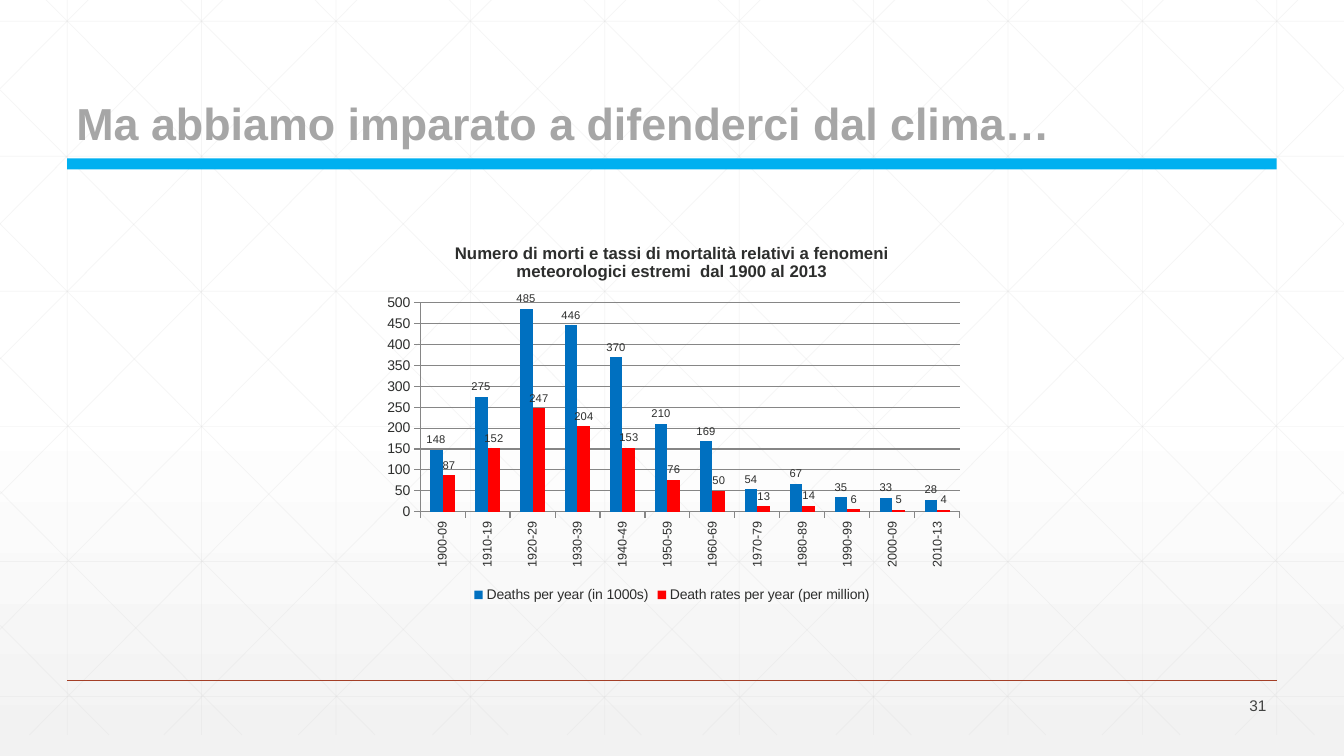
"""Build a slide with a clustered column chart over a faint lattice."""
from copy import deepcopy

from lxml.etree import SubElement
from pptx import Presentation
from pptx.chart.data import CategoryChartData
from pptx.dml.color import RGBColor
from pptx.enum.chart import XL_CHART_TYPE, XL_LABEL_POSITION, XL_LEGEND_POSITION, XL_TICK_MARK
from pptx.enum.shapes import MSO_CONNECTOR, MSO_SHAPE
from pptx.enum.text import MSO_ANCHOR, PP_ALIGN
from pptx.oxml import parse_xml
from pptx.oxml.ns import nsdecls, qn
from pptx.util import Inches, Pt

WHITE = RGBColor(0xFF, 0xFF, 0xFF)
PALE = RGBColor(0xF2, 0xF2, 0xF2)
LATTICE = RGBColor(0xD9, 0xD9, 0xD9)
RUST = RGBColor(0xA4, 0x3F, 0x27)
TITLE_GREY = RGBColor(0xA6, 0xA6, 0xA6)
NUMBER_GREY = RGBColor(0x42, 0x43, 0x42)
CYAN = RGBColor(0x00, 0xB0, 0xF0)
INK = RGBColor(0x2D, 0x2E, 0x2D)
AXIS_GREY = RGBColor(0x86, 0x86, 0x86)
BLUE = RGBColor(0x00, 0x70, 0xC0)
RED = RGBColor(0xFF, 0x00, 0x00)

WIDTH, HEIGHT = 13.33, 7.5
COLUMN, ROW = WIDTH / 10, 1.34
TOP, BOTTOM = -0.21, 7.29
SLOPE = 1.006
MARGIN = COLUMN / 2

deck = Presentation()
deck.slide_width, deck.slide_height = Inches(WIDTH), Inches(HEIGHT)
page = deck.slides.add_slide(deck.slide_layouts[6])

backdrop = page.background.fill
backdrop.gradient()
backdrop.gradient_angle = 270
stop_list = next(page.background._cSld.iter(qn("a:gsLst")))
stop_list.append(deepcopy(stop_list[0]))
for stop, position, color in zip(backdrop.gradient_stops, (0, 0.53, 1), (WHITE, WHITE, PALE)):
    stop.position = position
    stop.color.rgb = color


def add_rule(start, end, color, weight, opacity=100):
    rule = page.shapes.add_connector(
        MSO_CONNECTOR.STRAIGHT, *(Inches(length) for length in (*start, *end)))
    rule.line.color.rgb = color
    rule.line.width = Pt(weight)
    SubElement(next(rule.line._ln.iter(qn("a:srgbClr"))), qn("a:alpha"), val=str(opacity * 1000))
    SubElement(rule._element.spPr, qn("a:effectLst"))


def add_text(left, top, width, height, text, size, color, anchor):
    box = page.shapes.add_textbox(Inches(left), Inches(top), Inches(width), Inches(height))
    frame = box.text_frame
    frame.word_wrap = True
    frame.vertical_anchor = anchor
    frame.text = text
    para = frame.paragraphs[0]
    font = para.runs[0].font
    font.name, font.size, font.color.rgb = "Arial", Pt(size), color
    return para


lattice = [(((i + 0.5) * COLUMN, TOP), ((i + 0.5) * COLUMN, BOTTOM)) for i in range(10)]
lattice += [((0, 0.21 + i * ROW), (WIDTH, 0.21 + i * ROW)) for i in range(6)]
diagonals = []
for i in range(10):
    left = 0.25 + i * COLUMN
    run = min((BOTTOM - TOP) / SLOPE, WIDTH - left)
    diagonals.append(((left, TOP), (left + run, TOP + run * SLOPE)))
for i in range(5):
    foot = 1.08 + i * 1.32
    diagonals.append(((foot, BOTTOM), (0, BOTTOM - foot * SLOPE)))
lattice += diagonals
lattice += [((WIDTH - x1, y1), (WIDTH - x2, y2)) for (x1, y1), (x2, y2) in diagonals]
for start, end in lattice:
    add_rule(start, end, LATTICE, 0.5, 25)
add_rule((MARGIN, 0.9 * HEIGHT), (WIDTH - MARGIN, 0.9 * HEIGHT), RUST, 1)

title = add_text(0.66, 0.29, 11.83, 1.25, "Ma abbiamo imparato a difenderci dal clima…",
                 32, TITLE_GREY, MSO_ANCHOR.BOTTOM)
title.line_spacing = 0.9
title.runs[0].font.bold = True
number = add_text(11.66, 6.88, 1, 0.24, "31", 11, NUMBER_GREY, MSO_ANCHOR.MIDDLE)
number.alignment = PP_ALIGN.RIGHT

band = page.shapes.add_shape(MSO_SHAPE.RECTANGLE, Inches(MARGIN), Inches(1.57),
                             Inches(WIDTH - 2 * MARGIN), Inches(0.11))
band.shadow.inherit = False
band.fill.solid()
band.fill.fore_color.rgb = CYAN
band.line.fill.background()

data = CategoryChartData(number_format="#,##0")
data.categories = ["1900-09", "1910-19", "1920-29", "1930-39", "1940-49", "1950-59",
                   "1960-69", "1970-79", "1980-89", "1990-99", "2000-09", "2010-13"]
data.add_series("Deaths per year (in 1000s)",
                [148, 275, 485, 446, 370, 210, 169, 54, 67, 35, 33, 28])
data.add_series("Death rates per year (per million)",
                [87, 152, 247, 204, 153, 76, 50, 13, 14, 6, 5, 4])
chart = page.shapes.add_chart(XL_CHART_TYPE.COLUMN_CLUSTERED, Inches(3.69), Inches(2.25),
                              Inches(5.95), Inches(3.77), data).chart
chart.font.name, chart.font.size, chart.font.color.rgb = "Arial", Pt(10), INK

chart.has_title = True
heading = chart.chart_title.text_frame
heading.text = ("Numero di morti e tassi di mortalità relativi a fenomeni "
                "meteorologici estremi  dal 1900 al 2013")
span = heading.paragraphs[0].runs[0]
span.font.name, span.font.size, span.font.bold = "Arial", Pt(12), True
span.font.color.rgb = INK

chart.has_legend = True
chart.legend.position = XL_LEGEND_POSITION.BOTTOM
chart.legend.include_in_layout = False

for axis, size in ((chart.category_axis, 9), (chart.value_axis, 10)):
    axis.major_tick_mark = XL_TICK_MARK.OUTSIDE
    axis.minor_tick_mark = XL_TICK_MARK.NONE
    axis.format.line.color.rgb = AXIS_GREY
    axis.tick_labels.font.size = Pt(size)
chart.category_axis._element.find(qn("c:txPr")).find(qn("a:bodyPr")).set("rot", "-5400000")
chart.value_axis.minimum_scale, chart.value_axis.maximum_scale = 0, 500
chart.value_axis.major_unit = 50
chart.value_axis.has_major_gridlines = True
chart.value_axis.major_gridlines.format.line.color.rgb = AXIS_GREY

plot = chart.plots[0]
plot.gap_width, plot.overlap = 150, 0
plot.vary_by_categories = False
for series, color in zip(plot.series, (BLUE, RED)):
    series.format.fill.solid()
    series.format.fill.fore_color.rgb = color
    series.invert_if_negative = False
    labels = series.data_labels
    labels.show_value = True
    labels.number_format, labels.number_format_is_linked = "#,##0", False
    labels.position = XL_LABEL_POSITION.OUTSIDE_END
    labels.font.name, labels.font.size, labels.font.color.rgb = "Arial", Pt(8), INK

plot_area = next(chart._chartSpace.iter(qn("c:plotArea")))
for layout in plot_area.findall(qn("c:layout")):
    plot_area.remove(layout)
plot_area.insert(0, parse_xml(
    f'<c:layout {nsdecls("c")}><c:manualLayout><c:layoutTarget val="inner"/>'
    '<c:xMode val="edge"/><c:yMode val="edge"/><c:x val="0.08"/><c:y val="0.2"/>'
    '<c:w val="0.9"/><c:h val="0.55"/></c:manualLayout></c:layout>'))

deck.save("out.pptx")
